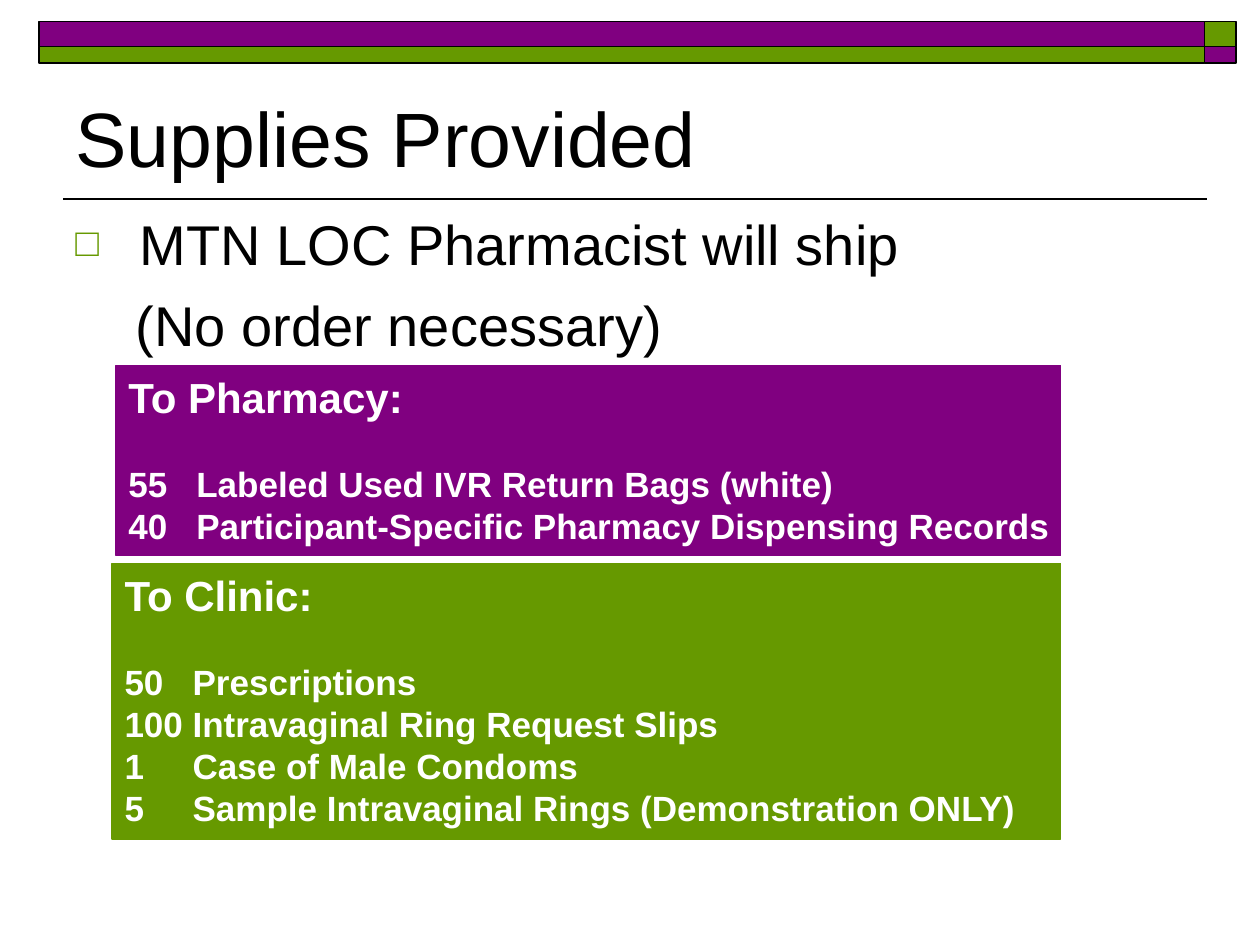
from dataclasses import dataclass

from lxml.etree import SubElement
from pptx import Presentation
from pptx.dml.color import RGBColor
from pptx.enum.shapes import MSO_CONNECTOR, MSO_SHAPE
from pptx.enum.text import MSO_ANCHOR, PP_ALIGN
from pptx.oxml.ns import qn
from pptx.util import Inches, Pt


@dataclass(frozen=True)
class Theme:
    font: str = "Arial"
    black: RGBColor = RGBColor(0, 0, 0)
    white: RGBColor = RGBColor(255, 255, 255)
    purple: RGBColor = RGBColor(0x80, 0x00, 0x80)
    green: RGBColor = RGBColor(0x66, 0x99, 0x00)
    title: int = 44
    body: int = 32
    heading: int = 24
    item: int = 20


THEME = Theme()


def add_block(page, left, top, width, height, fill, line, weight):
    block = page.shapes.add_shape(
        MSO_SHAPE.RECTANGLE, Inches(left), Inches(top), Inches(width), Inches(height)
    )
    block.shadow.inherit = False
    block.fill.solid()
    block.fill.fore_color.rgb = fill
    block.line.color.rgb = line
    block.line.width = Pt(weight)
    return block


def add_text_box(page, left, top, width, height, anchor):
    box = page.shapes.add_textbox(Inches(left), Inches(top), Inches(width), Inches(height))
    box.text_frame.word_wrap = True
    box.text_frame.vertical_anchor = anchor
    return box.text_frame


def write(para, text, size, color, bold=False, before=0, margin=0, hanging=0):
    para.alignment = PP_ALIGN.LEFT
    para.space_before = Pt(before)
    properties = para._p.get_or_add_pPr()
    properties.set("marL", str(Inches(margin)))
    properties.set("indent", str(Inches(-hanging)))
    span = para.add_run()
    span.text = text
    span.font.name = THEME.font
    span.font.size = Pt(size)
    span.font.bold = bold
    span.font.color.rgb = color


def add_bullet(para, symbol, color, percent):
    properties = para._p.get_or_add_pPr()
    tint = SubElement(properties, qn("a:buClr"))
    SubElement(tint, qn("a:srgbClr"), val=str(color))
    SubElement(properties, qn("a:buSzPct"), val=str(percent * 1000))
    SubElement(properties, qn("a:buFont"), typeface=THEME.font)
    SubElement(properties, qn("a:buChar"), char=symbol)


def add_banner(page, left, top, width, corner=0.25):
    bar = width - corner
    upper, lower = 0.2, 0.13
    for x, span_width, colors in (
        (left + bar, corner, (THEME.green, THEME.purple)),
        (left, bar, (THEME.purple, THEME.green)),
    ):
        for y, height, color in zip((top, top + upper), (upper, lower), colors):
            add_block(page, x, y, span_width, height, color, THEME.black, 1)


def add_title(page, left, top, width, height):
    rule_top = Inches(top + height + 0.08)
    rule = page.shapes.add_connector(
        MSO_CONNECTOR.STRAIGHT, Inches(left), rule_top, Inches(left + width + 0.08), rule_top
    )
    rule.line.color.rgb = THEME.black
    rule.line.width = Pt(1)
    SubElement(rule._element.spPr, qn("a:effectLst"))
    frame = add_text_box(page, left, top, width, height, MSO_ANCHOR.BOTTOM)
    write(frame.paragraphs[0], "Supplies Provided", THEME.title, THEME.black)


def add_intro(page, left, top, width, height):
    frame = add_text_box(page, left, top, width, height, MSO_ANCHOR.TOP)
    lead = frame.paragraphs[0]
    write(lead, "MTN LOC Pharmacist will ship", THEME.body, THEME.black,
          before=8, margin=0.51, hanging=0.51)
    add_bullet(lead, "□", THEME.green, 70)
    write(frame.add_paragraph(), "(No order necessary)", THEME.body, THEME.black,
          before=8, margin=0.48)


def add_supply_panel(page, left, top, width, height, color, heading, supplies):
    panel = add_block(page, left, top, width, height, color, color, 0.75)
    frame = panel.text_frame
    frame.word_wrap = True
    frame.vertical_anchor = MSO_ANCHOR.TOP
    frame.margin_right = Inches(0.02)
    write(frame.paragraphs[0], heading, THEME.heading, THEME.white, bold=True)
    for index, (count, supply) in enumerate(supplies):
        write(frame.add_paragraph(), f"{count}\t{supply}", THEME.item, THEME.white,
              bold=True, before=0 if index else 23, margin=0.54, hanging=0.54)


def main():
    deck = Presentation()
    deck.slide_width, deck.slide_height = Inches(10), Inches(7.5)
    page = deck.slides.add_slide(deck.slide_layouts[6])
    add_banner(page, 0.31, 0.17, 9.5)
    add_title(page, 0.5, 0.58, 9, 0.92)
    add_intro(page, 0.5, 1.61, 9, 1.25)
    add_supply_panel(page, 0.92, 2.9, 7.5, 1.51, THEME.purple, "To Pharmacy:", [
        (55, "Labeled Used IVR Return Bags (white)"),
        (40, "Participant-Specific Pharmacy Dispensing Records"),
    ])
    add_supply_panel(page, 0.89, 4.47, 7.53, 2.19, THEME.green, "To Clinic:", [
        (50, "Prescriptions"),
        (100, "Intravaginal Ring Request Slips"),
        (1, "Case of Male Condoms"),
        (5, "Sample Intravaginal Rings (Demonstration ONLY)"),
    ])
    deck.save("out.pptx")


if __name__ == "__main__":
    main()
